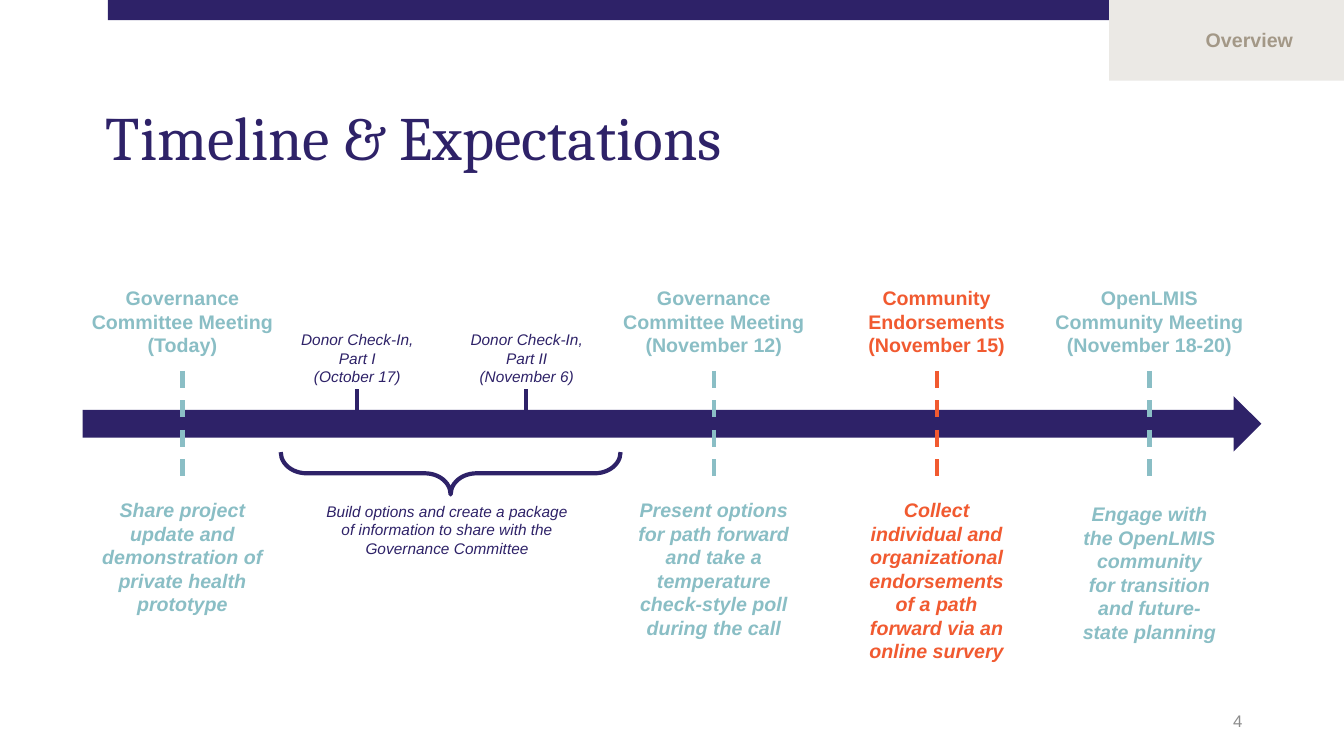
from lxml import etree
from pptx import Presentation
from pptx.dml.color import RGBColor
from pptx.enum.dml import MSO_LINE
from pptx.enum.shapes import MSO_CONNECTOR, MSO_SHAPE
from pptx.enum.text import MSO_ANCHOR, PP_ALIGN
from pptx.oxml.ns import qn
from pptx.util import Inches, Pt

NAVY, TEAL, ORANGE = "2E2268", "8ABEC5", "F15A30"
SAND, TAUPE, GREY = "EBE9E5", "A39887", "8C8C8C"

# Milestones: centre x, colour, heading lines, heading width, task, task width, task top
MILESTONES = [
    (1.81, TEAL, ["Governance Committee Meeting", "(Today)"], 2.36,
     "Share project update and demonstration of private health prototype", 1.96, 4.89),
    (7.08, TEAL, ["Governance Committee Meeting", "(November 12)"], 2.36,
     "Present options for path forward and take a temperature check-style poll "
     "during the call", 1.96, 4.89),
    (9.29, ORANGE, ["Community Endorsements", "(November 15)"], 2.36,
     "Collect individual and organizational endorsements of a path forward via an "
     "online survery", 1.74, 4.89),
    (11.4, TEAL, ["OpenLMIS Community Meeting", "(November 18-20)"], 2.17,
     "Engage with the OpenLMIS community for transition and future-state planning",
     1.52, 4.93),
]
# Check-ins: centre x, label lines
CHECK_INS = [
    (3.54, ["Donor Check-In,", "Part I", "(October 17)"]),
    (5.22, ["Donor Check-In,", "Part II", "(November 6)"]),
]
PACKAGE = ("Build options and create a package of information to share with the "
           "Governance Committee")

prs = Presentation()
prs.slide_width, prs.slide_height = Inches(13.33), Inches(7.5)
s = prs.slides.add_slide(prs.slide_layouts[5])


def rgb(color):
    return RGBColor.from_string(color)


def add_shape(kind, x, y, w, h, fill=None, line=None):
    sp = s.shapes.add_shape(kind, Inches(x), Inches(y), Inches(w), Inches(h))
    sp.shadow.inherit = False
    if fill:
        sp.fill.solid()
        sp.fill.fore_color.rgb = rgb(fill)
    else:
        sp.fill.background()
    if line:
        sp.line.color.rgb = rgb(line)
        sp.line.width = Pt(3)
    else:
        sp.line.fill.background()
    return sp


def add_mark(x, top, bottom, color, dashed=False):
    c = s.shapes.add_connector(MSO_CONNECTOR.STRAIGHT, Inches(x), Inches(top),
                               Inches(x), Inches(bottom))
    c.line.color.rgb = rgb(color)
    c.line.width = Pt(3)
    if dashed:
        c.line.dash_style = MSO_LINE.DASH
    etree.SubElement(c._element.spPr, qn("a:effectLst"))


def write(tf, lines, size, color, align, font="Arial", bold=False, italic=False):
    tf.word_wrap = True
    for i, line in enumerate(lines):
        p = tf.add_paragraph() if i else tf.paragraphs[0]
        p.alignment = align
        r = p.add_run()
        r.text = line
        r.font.name, r.font.size = font, Pt(size)
        r.font.bold, r.font.italic = bold, italic
        r.font.color.rgb = rgb(color)


def add_text(x, y, w, h, lines, size, color, align=PP_ALIGN.CENTER, **style):
    tb = s.shapes.add_textbox(Inches(x), Inches(y), Inches(w), Inches(h))
    write(tb.text_frame, lines, size, color, align, **style)
    return tb.text_frame


# Header band and section tag
add_shape(MSO_SHAPE.RECTANGLE, 1.07, -0.02, 11.19, 0.22, NAVY)
add_shape(MSO_SHAPE.RECTANGLE, 11, 0, 2.33, 0.8, SAND)
add_text(11.86, 0.23, 1.33, 0.34, ["Overview"], 14, TAUPE, PP_ALIGN.LEFT, bold=True)

# Title
title = s.shapes.title
title.left, title.top = Inches(0.95), Inches(0.4)
title.width, title.height = Inches(11.5), Inches(1.37)
title.text_frame.vertical_anchor = MSO_ANCHOR.BOTTOM
write(title.text_frame, ["Timeline & Expectations"], 44, NAVY, PP_ALIGN.LEFT, "Cambria")
title.text_frame.paragraphs[0].line_spacing = 0.9

# Timeline arrow
add_shape(MSO_SHAPE.RIGHT_ARROW, 0.82, 3.93, 11.69, 0.55, NAVY)

# Milestones
for x, color, heading, head_w, task, task_w, task_top in MILESTONES:
    add_mark(x, 3.68, 4.83, color, dashed=True)
    add_text(x - head_w / 2, 2.79, head_w, 0.81, heading, 14, color, bold=True)
    add_text(x - task_w / 2, task_top, task_w, 1.51, [task], 14, color,
             bold=True, italic=True)

# Donor check-ins
for x, label in CHECK_INS:
    add_mark(x, 3.86, 4.15, NAVY)
    add_text(x - 0.93, 3.23, 1.87, 0.66, label, 11, NAVY, italic=True)

# Brace under the check-ins
brace = add_shape(MSO_SHAPE.LEFT_BRACE, 4.26, 3.01, 0.42, 3.37, line=NAVY)
brace.rotation = 270
brace.adjustments[0], brace.adjustments[1] = 0.61, 0.5
add_text(3.06, 4.93, 2.75, 0.66, [PACKAGE], 11, NAVY, italic=True)

# Page number
page = add_text(9.42, 6.95, 3, 0.4, ["4"], 12, GREY, PP_ALIGN.RIGHT)
page.vertical_anchor = MSO_ANCHOR.MIDDLE

prs.save("out.pptx")
